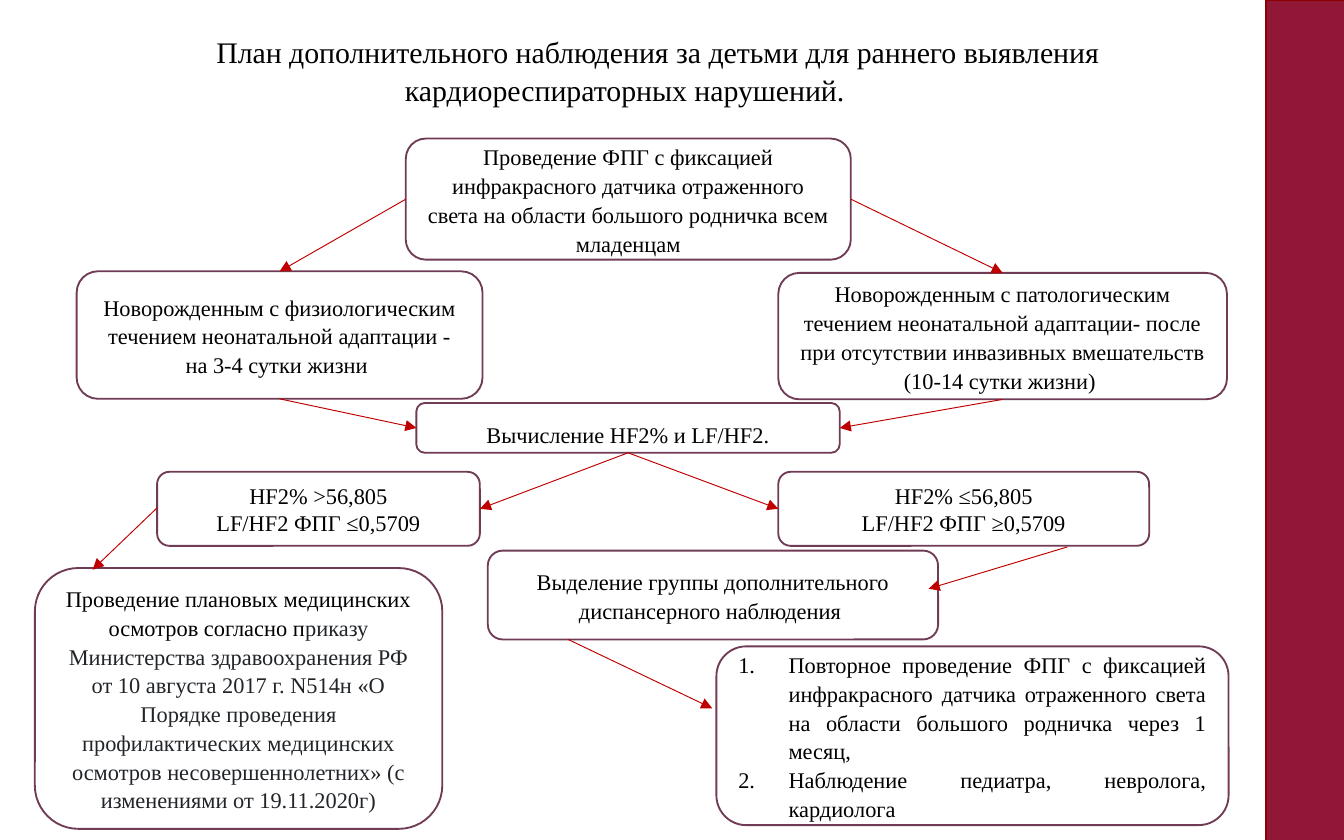
from lxml import etree
from pptx import Presentation
from pptx.dml.color import RGBColor
from pptx.enum.shapes import MSO_CONNECTOR, MSO_SHAPE
from pptx.enum.text import MSO_ANCHOR, PP_ALIGN
from pptx.oxml.ns import qn
from pptx.util import Cm, Pt

STRAIGHT = MSO_CONNECTOR.STRAIGHT
RECTANGLE, ROUNDED = MSO_SHAPE.RECTANGLE, MSO_SHAPE.ROUNDED_RECTANGLE
MIDDLE = MSO_ANCHOR.MIDDLE
CENTER, JUSTIFY = PP_ALIGN.CENTER, PP_ALIGN.JUSTIFY

WHITE = RGBColor(0xFF, 0xFF, 0xFF)
BLACK = RGBColor(0x00, 0x00, 0x00)
GRAPHITE = RGBColor(0x21, 0x25, 0x29)
BURGUNDY = RGBColor(0x91, 0x17, 0x37)
DARK_RED = RGBColor(0x8E, 0x00, 0x00)
PLUM = RGBColor(0x6F, 0x3B, 0x55)
RED = RGBColor(0xC0, 0x00, 0x00)

TOP, LEFT, BOTTOM, RIGHT = range(4)


def add_panel(kind, place, fill, outline):
    panel = slide.shapes.add_shape(kind, *map(Cm, place))
    panel.shadow.inherit = False
    panel.fill.solid()
    panel.fill.fore_color.rgb = fill
    panel.line.color.rgb = outline
    panel.line.width = Pt(1)
    return panel


def write(paragraph, runs, size, layout):
    for name, value in layout.items():
        setattr(paragraph, name, value)
    for text, color in runs:
        run = paragraph.add_run()
        run.text = text
        for name, value in {"name": "Times New Roman", "size": Pt(size)}.items():
            setattr(run.font, name, value)
        run.font.color.rgb = color


prs = Presentation()
prs.slide_width, prs.slide_height = Cm(25.4), Cm(15.88)
slide = prs.slides.add_slide(prs.slide_layouts[6])

add_panel(RECTANGLE, (23.93, 0, 1.57, 15.93), BURGUNDY, DARK_RED)

title = slide.shapes.add_textbox(Cm(0.81), Cm(0.46), Cm(22), Cm(1.68)).text_frame
title.word_wrap = True
heading = title.paragraphs[0]
heading._p.get_or_add_pPr().set("indent", str(Cm(1.25)))
write(
    heading,
    [("План дополнительного наблюдения за детьми для раннего выявления кардиореспираторных нарушений.", BLACK)],
    16,
    {"alignment": CENTER, "line_spacing": 1.07},
)

steps = {
    "screening": ((7.67, 2.62, 8.41, 2.29), 1.07, [
        [("Проведение ФПГ с фиксацией инфракрасного датчика отраженного света на области большого родничка всем младенцам", BLACK)],
    ]),
    "healthy": ((1.45, 5.13, 7.67, 2.41), 1.07, [
        [("Новорожденным с физиологическим течением неонатальной адаптации - на 3-4 сутки жизни ", BLACK)],
    ]),
    "pathological": ((14.71, 5.16, 8.48, 2.39), 1.07, [
        [("Новорожденным с патологическим течением неонатальной адаптации- после при отсутствии инвазивных вмешательств (10-14 сутки жизни) ", BLACK)],
    ]),
    "calculation": ((7.87, 7.62, 8, 0.94), 1.5, [
        [("Вычисление HF2% и LF/HF2.", BLACK)],
    ]),
    "normal": ((2.97, 8.92, 6.1, 1.4), 1.0, [
        [("HF2% >56,805", BLACK)],
        [("LF/HF2 ФПГ ≤0,5709", BLACK)],
    ]),
    "risk": ((14.71, 8.92, 7.01, 1.4), 1.0, [
        [("HF2% ≤56,805", BLACK)],
        [("LF/HF2 ФПГ ≥0,5709", BLACK)],
    ]),
    "routine": ((0.66, 10.74, 7.7, 4.93), 1.07, [
        [
            ("Проведение плановых медицинских осмотров согласно п", BLACK),
            ("риказу Министерства здравоохранения РФ от 10 августа 2017 г. N514н «О Порядке проведения профилактических медицинских осмотров несовершеннолетних» (с изменениями от 19.11.2020г)", GRAPHITE),
        ],
    ]),
    "group": ((9.22, 10.41, 8.51, 1.68), 1.07, [
        [("Выделение группы дополнительного диспансерного наблюдения ", BLACK)],
    ]),
    "follow_up": ((13.54, 12.22, 9.68, 3.38), 1.07, [
        [("Повторное проведение ФПГ с фиксацией инфракрасного датчика отраженного света на области большого родничка через 1 месяц, ", BLACK)],
        [("Наблюдение педиатра, невролога, кардиолога ", BLACK)],
    ]),
}

boxes = {}
for step, (place, spacing, paragraphs) in steps.items():
    boxes[step] = add_panel(ROUNDED, place, WHITE, PLUM)
    frame = boxes[step].text_frame
    frame.word_wrap = True
    frame.vertical_anchor = MIDDLE
    numbered = step == "follow_up"
    for index, runs in enumerate(paragraphs):
        paragraph = frame.add_paragraph() if index else frame.paragraphs[0]
        if numbered:
            properties = paragraph._p.get_or_add_pPr()
            properties.set("marL", str(Cm(0.95)))
            properties.set("indent", str(-Cm(0.95)))
            etree.SubElement(properties, qn("a:buAutoNum"), type="arabicPeriod")
        write(paragraph, runs, 12, {
            "alignment": JUSTIFY if numbered else CENTER,
            "line_spacing": spacing,
        })

arrows = []
for source, source_side, target, target_side in [
    ("screening", RIGHT, "pathological", TOP),
    ("screening", LEFT, "healthy", TOP),
    ("healthy", BOTTOM, "calculation", LEFT),
    ("pathological", BOTTOM, "calculation", RIGHT),
    ("calculation", BOTTOM, "normal", RIGHT),
    ("calculation", BOTTOM, "risk", LEFT),
]:
    arrow = slide.shapes.add_connector(STRAIGHT, 0, 0, 0, 0)
    arrow.begin_connect(boxes[source], source_side)
    arrow.end_connect(boxes[target], target_side)
    arrows.append(arrow)

for ends in [
    (2.97, 9.6, 1.75, 10.77),
    (20.17, 10.34, 17.55, 11.13),
    (10.74, 12.09, 13.46, 13.39),
]:
    arrows.append(slide.shapes.add_connector(STRAIGHT, *map(Cm, ends)))

for arrow in arrows:
    arrow.line.color.rgb = RED
    arrow.line.width = Pt(0.5)
    etree.SubElement(arrow.line._get_or_add_ln(), qn("a:tailEnd"), type="triangle")
    etree.SubElement(arrow._element.spPr, qn("a:effectLst"))

prs.save("out.pptx")
